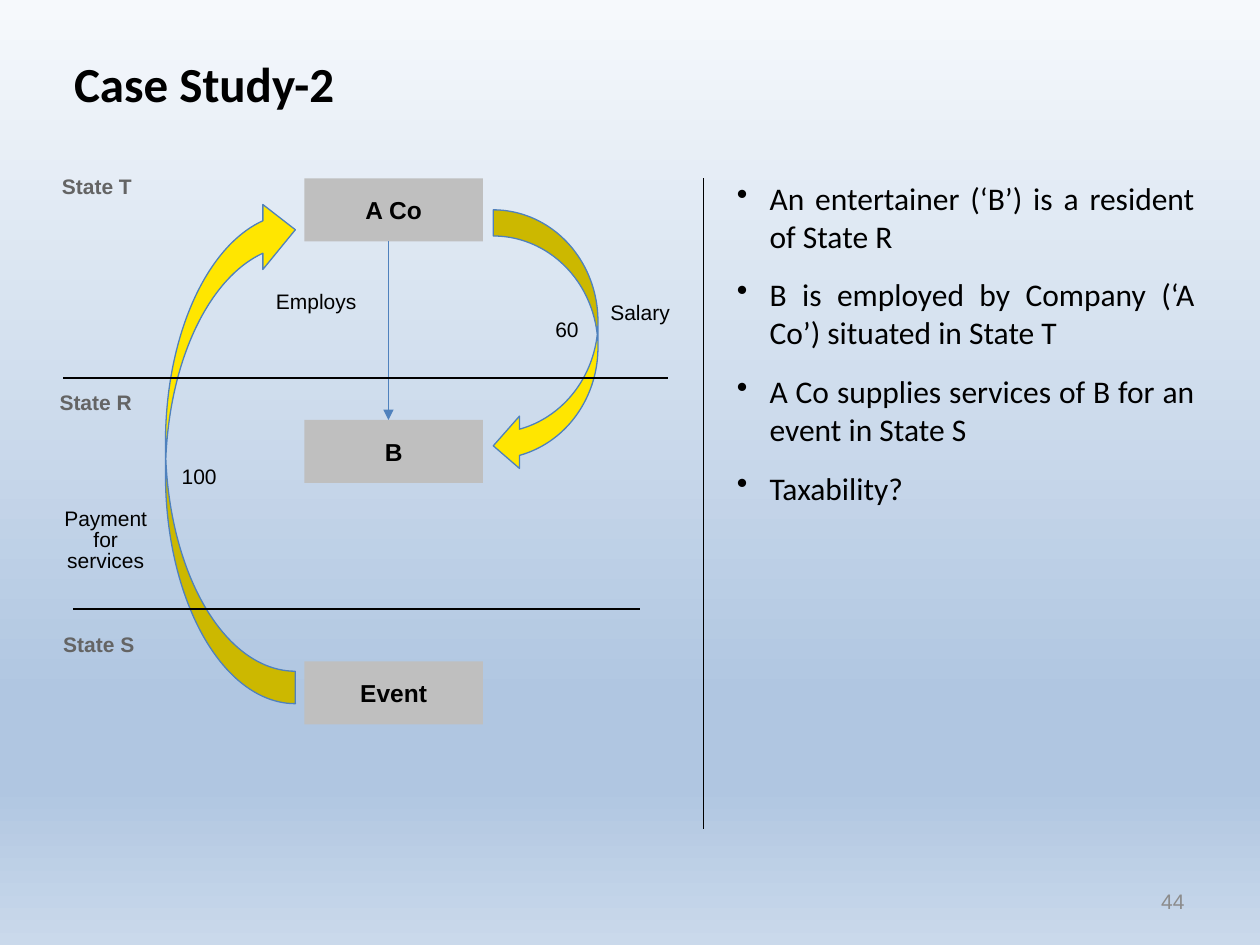
from lxml import etree
from pptx import Presentation
from pptx.dml.color import RGBColor
from pptx.enum.shapes import MSO_CONNECTOR, MSO_SHAPE
from pptx.enum.text import MSO_ANCHOR, MSO_AUTO_SIZE, PP_ALIGN
from pptx.oxml.ns import qn
from pptx.util import Pt

LEFT, CENTER, RIGHT, JUST = PP_ALIGN.LEFT, PP_ALIGN.CENTER, PP_ALIGN.RIGHT, PP_ALIGN.JUSTIFY
TOP, MIDDLE = MSO_ANCHOR.TOP, MSO_ANCHOR.MIDDLE
GROW, FIXED = MSO_AUTO_SIZE.SHAPE_TO_FIT_TEXT, MSO_AUTO_SIZE.NONE
RECT, CURVE = MSO_SHAPE.RECTANGLE, MSO_SHAPE.CURVED_DOWN_ARROW

THEME = {
    "sky": [(0, "F6F9FC"), (74, "B0C6E1"), (83, "B0C6E1"), (100, "CAD9EB")],
    "ink": "000000", "state": "646464", "page": "8C8C8C",
    "box": "BFBFBF", "arrow": "FFE600", "edge": "4F81BD",
    "head": "Calibri", "body": "Arial",
    "title": 28, "list": 18, "name": 14, "label": 12, "line": 0.75,
}

# Content
TITLE = "Case Study-2"
POINTS = [
    "An entertainer (‘B’) is a resident of State R",
    "B is employed by Company (‘A Co’) situated in State T",
    "A Co supplies services of B for an event in State S",
    "Taxability?",
]
PARTIES = ["A Co", "B", "Event"]
STATES = [("State T", 19.4, 98.6), ("State R", 18.7, 221.8), ("State S", 20.5, 360)]
# Text, left, top, width, height
LABELS = [
    ("Payment for services", 30.2, 288, 60.5, 40.3),
    ("Employs", 144.7, 164.2, 72, 15.1),
    ("Salary", 329.8, 170.6, 72, 15.1),
    ("100", 77.8, 264.2, 72, 15.1),
    ("60", 288, 180, 72, 15.1),
]
PAGE = "44"

# Left, top, width, height, turn
FLOWS = [(-13, 220.3, 289.4, 74.2, 270), (236.9, 164.9, 149.8, 59.8, 90)]
# From x, y to x, y
RULES = [(402, 102, 402, 474), (42, 348, 366, 348), (36, 216, 382, 216)]
BOX_X, BOX_Y, BOX_W, BOX_H, STEP = 174, 102, 102, 36, 138
EMPLOY_X = 222


def color(name):
    return RGBColor.from_string(THEME[name])


def write(shape, text, size="label", font="body", ink="ink", bold=False, align=CENTER,
          anchor=TOP, inset=(7.2, 3.6, 7.2, 3.6), fit=FIXED, space=None,
          before=0, after=0, bullet=False):
    frame = shape.text_frame
    frame.word_wrap = True
    frame.auto_size = fit
    frame.vertical_anchor = anchor
    (frame.margin_left, frame.margin_top,
     frame.margin_right, frame.margin_bottom) = map(Pt, inset)
    frame.text = text
    for para in frame.paragraphs:
        para.alignment = align
        para.line_spacing = space
        para.space_before, para.space_after = Pt(before), Pt(after)
        face = para.font
        face.name, face.size, face.bold = THEME[font], Pt(THEME[size]), bold
        face.color.rgb = color(ink)
        for run in para.runs:
            run.font.name, run.font.size, run.font.bold = THEME[font], Pt(THEME[size]), bold
            run.font.color.rgb = color(ink)
        if bullet:
            props = para._p.get_or_add_pPr()
            props.set("marL", str(Pt(18.7)))
            props.set("indent", str(-Pt(18.7)))
            mark = etree.Element(qn("a:buChar"), char="•")
            props.insert_element_before(mark, "a:tabLst", "a:defRPr", "a:extLst")


def add_text(slide, area, text, **style):
    write(slide.shapes.add_textbox(*map(Pt, area)), text, **style)


def add_shape(slide, kind, area, fill, edge=None):
    shape = slide.shapes.add_shape(kind, *map(Pt, area))
    shape.shadow.inherit = False
    shape.fill.solid()
    shape.fill.fore_color.rgb = color(fill)
    if edge:
        shape.line.color.rgb = color(edge)
        shape.line.width = Pt(THEME["line"])
    else:
        shape.line.fill.background()
    return shape


def add_line(slide, ends, ink="ink", arrow=False):
    line = slide.shapes.add_connector(MSO_CONNECTOR.STRAIGHT, *map(Pt, ends))
    line.line.color.rgb = color(ink)
    line.line.width = Pt(THEME["line"])
    props = line._element.spPr
    if arrow:
        etree.SubElement(props.find(qn("a:ln")), qn("a:tailEnd"), type="triangle")
    etree.SubElement(props, qn("a:effectLst"))


def paint_sky(slide):
    fill = slide.background.fill
    fill.gradient()
    fill.gradient_angle = 270
    stops = slide._element.find(".//" + qn("a:gsLst"))
    for stop in list(stops):
        stops.remove(stop)
    for pos, tone in THEME["sky"]:
        stop = etree.SubElement(stops, qn("a:gs"), pos=str(pos * 1000))
        etree.SubElement(stop, qn("a:srgbClr"), val=tone)


def main():
    deck = Presentation()
    deck.slide_width, deck.slide_height = Pt(720), Pt(540)
    slide = deck.slides.add_slide(deck.slide_layouts[6])
    paint_sky(slide)

    # Title and points
    add_text(slide, (35.3, 23, 648, 49), TITLE, size="title", font="head",
             bold=True, align=LEFT, anchor=MIDDLE)
    add_text(slide, (414, 98.6, 275.8, 390.2), "\n".join(POINTS), size="list",
             font="head", align=JUST, before=6, after=6, bullet=True)

    # Parties
    for i, name in enumerate(PARTIES):
        box = add_shape(slide, RECT, (BOX_X, BOX_Y + i * STEP, BOX_W, BOX_H), "box")
        write(box, name, size="name", bold=True, anchor=MIDDLE)

    # Money flows, employment arrow and borders
    for *area, turn in FLOWS:
        add_shape(slide, CURVE, area, "arrow", "edge").rotation = turn
    add_line(slide, (EMPLOY_X, BOX_Y + BOX_H, EMPLOY_X, BOX_Y + STEP), "edge", arrow=True)
    for ends in RULES:
        add_line(slide, ends)

    # Labels
    small = {"inset": (0, 2.9, 0, 0), "fit": GROW, "space": 0.85, "after": 6}
    for text, *area in LABELS:
        add_text(slide, area, text, **small)
    for text, x, y in STATES:
        add_text(slide, (x, y, 72, 15.1), text, ink="state", bold=True, **small)

    # Page number
    add_text(slide, (516, 500.4, 168, 28.8), PAGE, ink="page", align=RIGHT, anchor=MIDDLE)
    deck.save("out.pptx")


if __name__ == "__main__":
    main()
